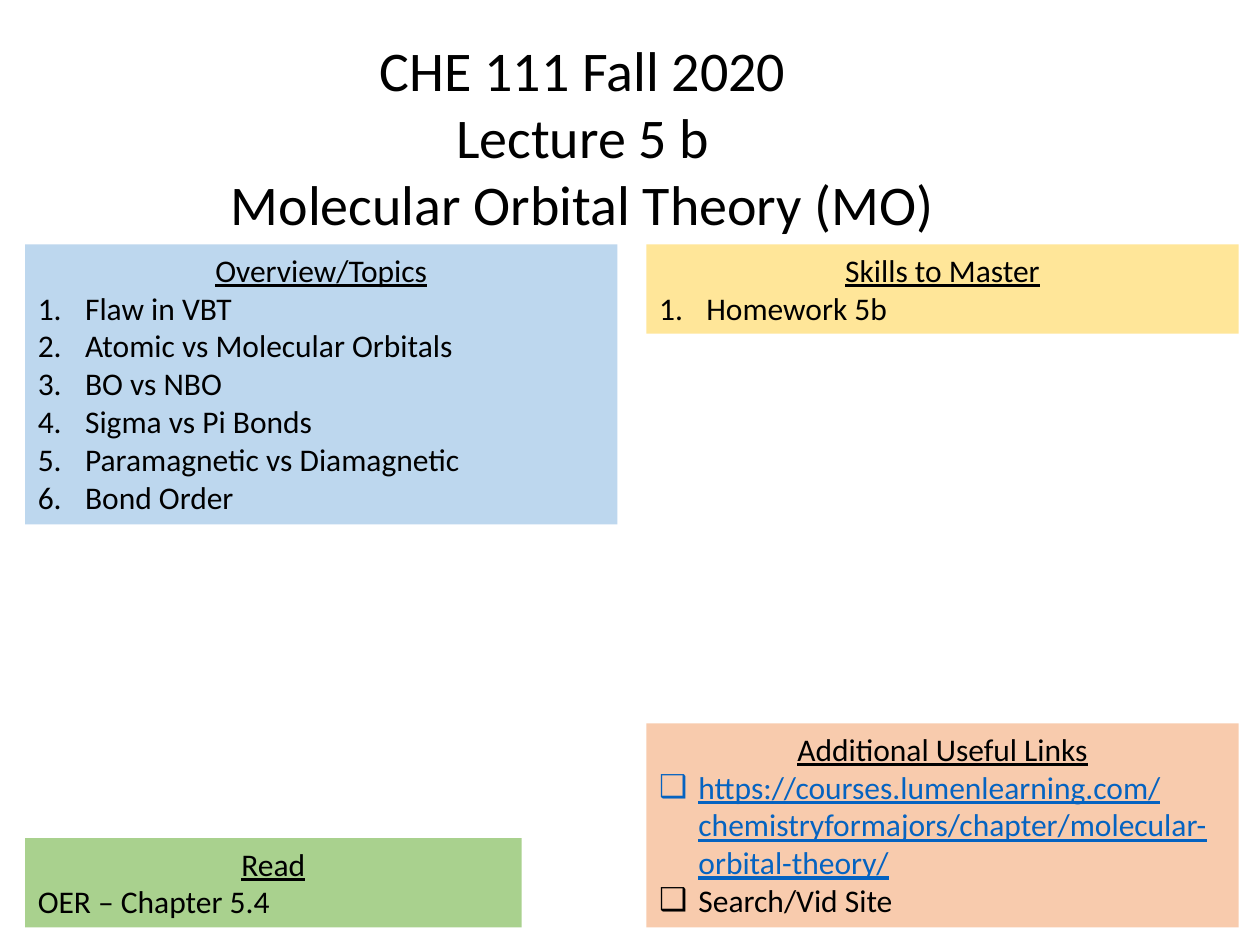
from lxml import etree
from pptx import Presentation
from pptx.dml.color import RGBColor
from pptx.enum import text
from pptx.oxml import ns
from pptx.util import Pt

COLORS = {
    "ink": "000000", "link": "0563C1", "blue": "BDD7EE",
    "yellow": "FFE699", "green": "A9D18E", "orange": "F8CBAD",
}
FONT = "Calibri"
LEFT, RIGHT = 14.4, 369.4
TOP, BOTTOM = 139.7, 530
COLUMN = 338.4


class LectureSlide:
    """Style and drawing methods for one course slide."""

    def __init__(self, slide):
        self.slide = slide

    def place(self, idx, left, top, width, height):
        holder = self.slide.placeholders[idx]
        holder.left, holder.top = Pt(left), Pt(top)
        holder.width, holder.height = Pt(width), Pt(height)
        frame = holder.text_frame
        frame.auto_size = text.MSO_AUTO_SIZE.NONE
        frame.vertical_anchor = text.MSO_ANCHOR.TOP
        frame.word_wrap = True
        return holder

    def style(self, paragraph, size, color="ink", underline=False):
        paragraph.space_before = Pt(0)
        for run in paragraph.runs:
            run.font.name, run.font.size = FONT, Pt(size)
            run.font.bold, run.font.underline = False, underline
            run.font.color.rgb = RGBColor.from_string(COLORS[color])

    def bullet(self, paragraph, kind, indent=0):
        """Kind is 'number', 'box' or None for a plain line."""
        props = paragraph._p.get_or_add_pPr()
        props.set("marL", str(Pt(indent)))
        props.set("indent", str(-Pt(indent)))
        tag, attributes = {
            "number": ("a:buAutoNum", {"type": "arabicPeriod"}),
            "box": ("a:buChar", {"char": "❑"}),
            None: ("a:buNone", {}),
        }[kind]
        etree.SubElement(props, ns.qn(tag), attributes)

    def title(self, lines, left, top, width, height):
        frame = self.place(0, left, top, width, height).text_frame
        frame.word_wrap = False
        frame.text = "\n".join(lines)
        for line in frame.paragraphs:
            line.alignment = text.PP_ALIGN.CENTER
            self.style(line, 32)

    def panel(self, idx, box, fill, heading, items, kind=None, indent=0):
        holder = self.place(idx, *box)
        holder.fill.solid()
        holder.fill.fore_color.rgb = RGBColor.from_string(COLORS[fill])
        frame = holder.text_frame
        frame.text = "\n".join([heading, *items])
        first, *entries = frame.paragraphs
        self.bullet(first, None)
        first.alignment = text.PP_ALIGN.CENTER
        self.style(first, 18, underline=True)
        for entry in entries:
            is_link = entry.text.startswith("https:")
            self.bullet(entry, kind, indent)
            entry.alignment = text.PP_ALIGN.LEFT
            self.style(entry, 18, "link" if is_link else "ink", is_link)


def main():
    deck = Presentation()
    deck.slide_width, deck.slide_height = Pt(720), Pt(540)
    # The comparison layout has a title and four body placeholders
    lecture = LectureSlide(deck.slides.add_slide(deck.slide_layouts[4]))

    # Course title
    lecture.title(
        ["CHE 111 Fall 2020", "Lecture 5 b", "Molecular Orbital Theory (MO)"],
        122.4, 16.4, 421.2, 123.8)

    # Upper panels share a top edge
    lecture.panel(
        1, (LEFT, TOP, COLUMN, 160), "blue", "Overview/Topics",
        ["Flaw in VBT", "Atomic vs Molecular Orbitals", "BO vs NBO",
         "Sigma vs Pi Bonds", "Paramagnetic vs Diamagnetic", "Bond Order"],
        "number", 27)
    lecture.panel(
        2, (RIGHT, TOP, COLUMN, 51), "yellow", "Skills to Master",
        ["Homework 5b"], "number", 27)

    # Lower panels share a bottom edge
    lecture.panel(
        3, (LEFT, BOTTOM - 51, 283.7, 51), "green", "Read",
        ["OER – Chapter 5.4"])
    lecture.panel(
        4, (RIGHT, BOTTOM - 116.6, COLUMN, 116.6), "orange",
        "Additional Useful Links",
        ["https://courses.lumenlearning.com/chemistryformajors/chapter/"
         "molecular-orbital-theory/", "Search/Vid Site"],
        "box", 22.5)

    deck.save("out.pptx")


if __name__ == "__main__":
    main()
